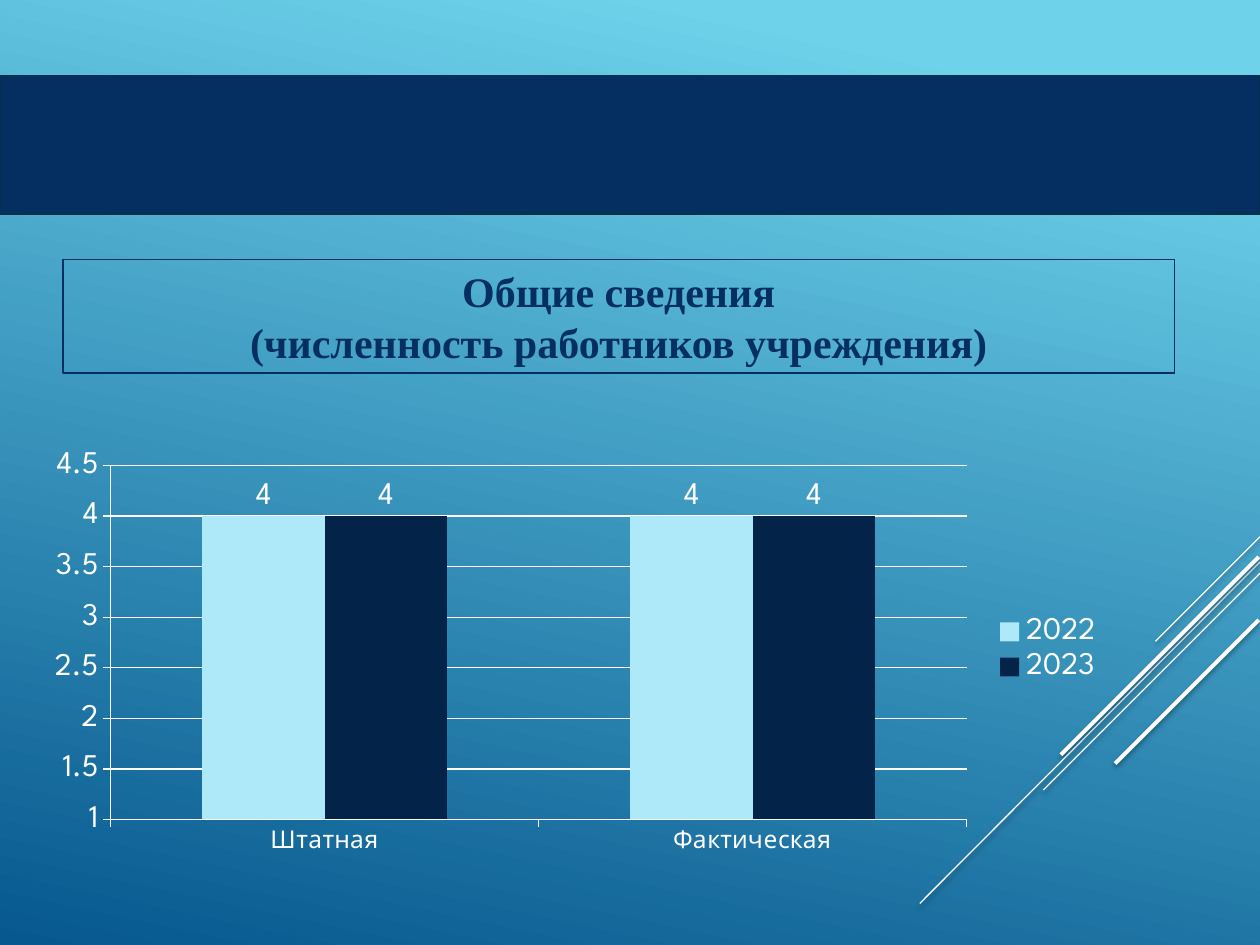
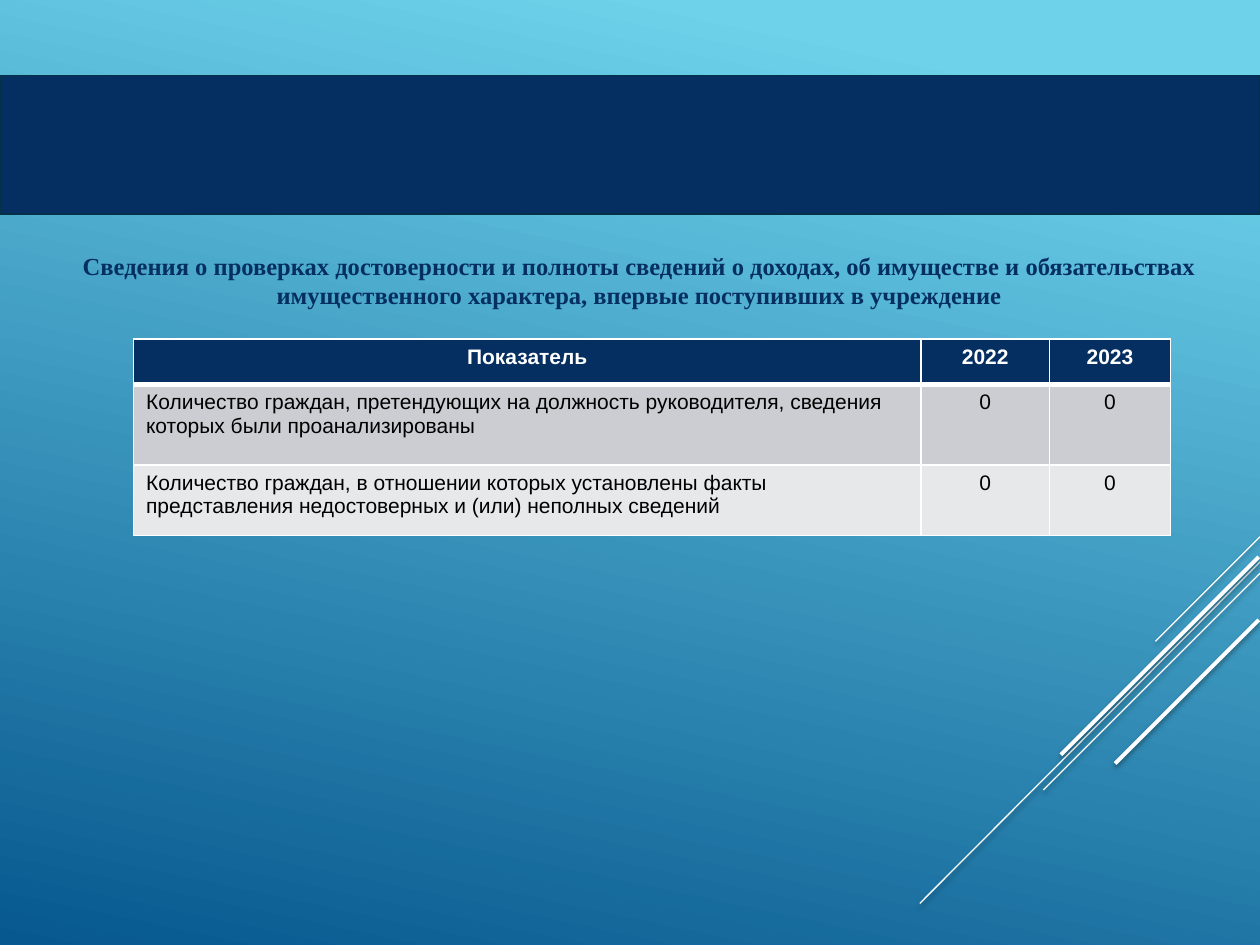
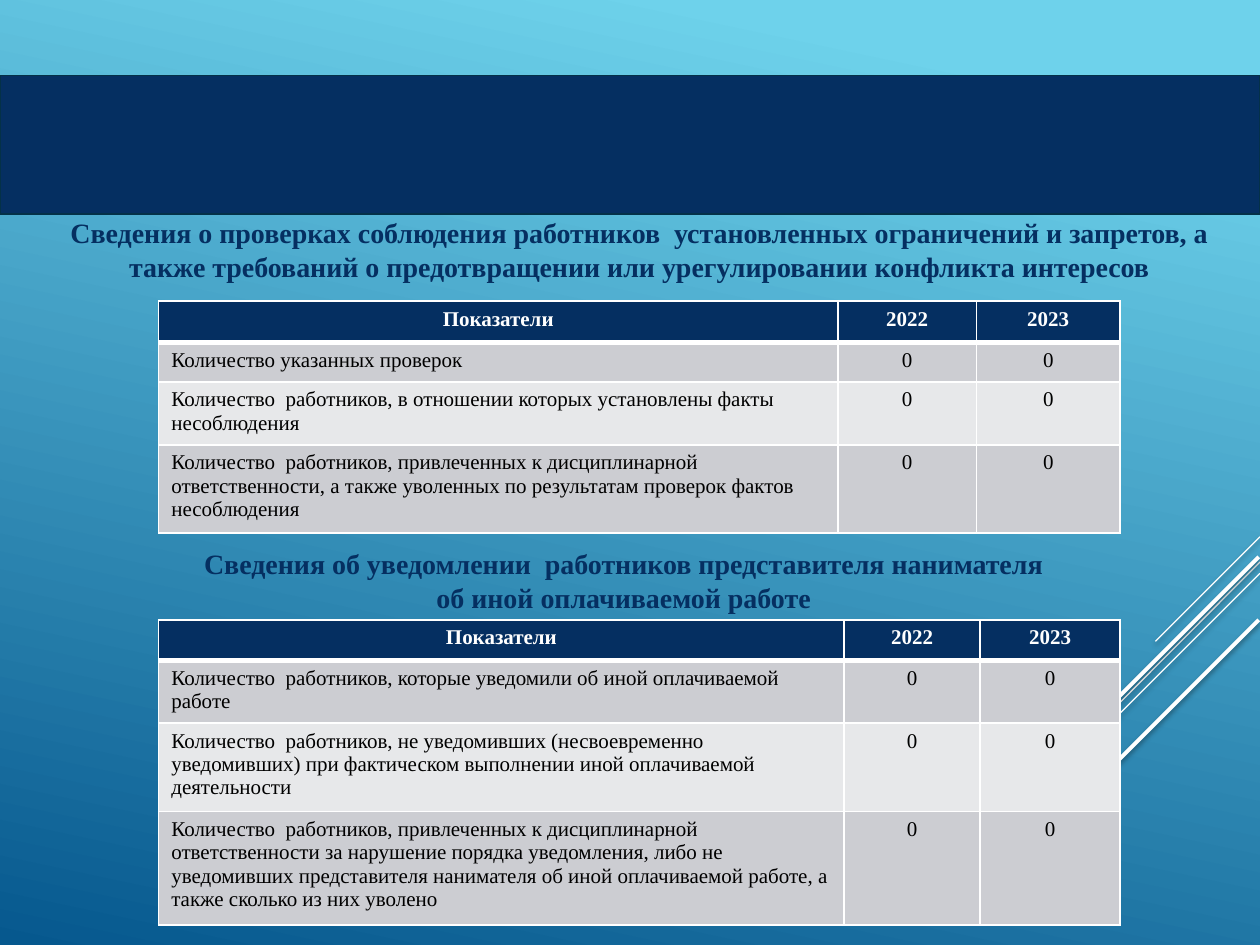
from lxml import etree
from pptx import Presentation
from pptx.chart.data import CategoryChartData
from pptx.dml.color import RGBColor
from pptx.enum.chart import XL_CHART_TYPE, XL_LABEL_POSITION, XL_LEGEND_POSITION, XL_TICK_MARK
from pptx.enum.shapes import MSO_CONNECTOR, MSO_SHAPE
from pptx.enum.text import MSO_ANCHOR, MSO_AUTO_SIZE, PP_ALIGN
from pptx.oxml import parse_xml
from pptx.oxml.ns import nsdecls
from pptx.util import Inches, Pt

COLUMNS = XL_CHART_TYPE.COLUMN_CLUSTERED
LABELS_ABOVE = XL_LABEL_POSITION.OUTSIDE_END
LEGEND_RIGHT = XL_LEGEND_POSITION.RIGHT
TICK_OUT, TICK_NONE = XL_TICK_MARK.OUTSIDE, XL_TICK_MARK.NONE
STRAIGHT = MSO_CONNECTOR.STRAIGHT
BAND = MSO_SHAPE.FLOWCHART_PROCESS
TOP, NO_FIT = MSO_ANCHOR.TOP, MSO_AUTO_SIZE.NONE
LEFT, CENTER = PP_ALIGN.LEFT, PP_ALIGN.CENTER

COLORS = {
    "sky": "6ED2EB", "deep": "06588E", "navy": "052F61", "band_line": "043148",
    "white": "FFFFFF", "black": "000000", "row_odd": "CCCDD2", "row_even": "E7E8EA",
    "bar_2022": "ADE9F8", "bar_2023": "042349",
}
SERIF, SANS, CHART_FONT = "Times New Roman", "Arial", "League Spartan"
YEARS = ["2022", "2023"]
RAYS = [
    (10, 4.26, 9.17, 5.09, 0.75),
    (10, 4.46, 7.3, 7.17, 0.75),
    (10, 4.55, 8.28, 6.27, 0.75),
    (9.99, 4.42, 8.42, 5.99, 2.25),
    (9.99, 4.92, 8.85, 6.06, 2.25),
]


def rgb(name):
    """Return the named palette colour."""
    return RGBColor.from_string(COLORS[name])


def style_font(font, name, size, color, bold=False):
    """Apply typeface, size, colour and weight."""
    font.name, font.size, font.bold = name, Pt(size), bold
    font.color.rgb = rgb(color)


def style_line(line, color, width):
    """Apply a solid line colour and width."""
    line.color.rgb = rgb(color)
    line.width = Pt(width)


def paint_background(prs):
    """Fill the master background with the blue gradient."""
    fill = prs.slide_master.background.fill
    fill.gradient()
    fill.gradient_angle = 258
    for stop, color, position in zip(fill.gradient_stops, ("sky", "deep"), (0.1, 1)):
        stop.color.rgb = rgb(color)
        stop.position = position


def add_ray(s, x1, y1, x2, y2, width):
    """Draw one white diagonal line with a soft shadow."""
    ray = s.shapes.add_connector(STRAIGHT, Inches(x1), Inches(y1), Inches(x2), Inches(y2))
    style_line(ray.line, "white", width)
    ray._element.spPr.append(parse_xml(
        f'<a:effectLst {nsdecls("a")}>'
        f'<a:outerShdw blurRad="{Pt(3.1)}" dist="{Pt(1.6)}" dir="5400000">'
        f'<a:srgbClr val="{COLORS["black"]}"><a:alpha val="38000"/></a:srgbClr>'
        '</a:outerShdw></a:effectLst>'))


def format_heading(sp, text, box, size):
    """Place a heading and set its centred bold navy text."""
    sp.left, sp.top, sp.width, sp.height = (Inches(v) for v in box)
    tf = sp.text_frame
    tf.text = text
    tf.word_wrap, tf.auto_size, tf.vertical_anchor = True, NO_FIT, TOP
    p = tf.paragraphs[0]
    p.alignment = CENTER
    for r in p.runs:
        style_font(r.font, SERIF, size, "navy", True)


def add_slide(prs, title, box, size):
    """Add a slide with the shared decoration and a title."""
    s = prs.slides.add_slide(prs.slide_layouts[5])
    for ray in RAYS:
        add_ray(s, *ray)
    band = s.shapes.add_shape(BAND, 0, Inches(0.6), Inches(10), Inches(1.1))
    band.shadow.inherit = False
    band.fill.solid()
    band.fill.fore_color.rgb = rgb("navy")
    style_line(band.line, "band_line", 1)
    format_heading(s.shapes.title, title, box, size)
    return s


def set_borders(cell, top, bottom):
    """Draw white cell borders, one point wide at the sides."""
    tc_pr = cell._tc.get_or_add_tcPr()
    for side, width in (("L", 1), ("R", 1), ("T", top), ("B", bottom)):
        tc_pr.append(parse_xml(
            f'<a:ln{side} {nsdecls("a")} w="{Pt(width)}"><a:solidFill>'
            f'<a:srgbClr val="{COLORS["white"]}"/></a:solidFill></a:ln{side}>'))


def format_cell(cell, text, row, col, font):
    """Write one cell with the style of its row and column."""
    header = row == 0
    set_borders(cell, 3 if row == 1 else 1, 3 if header else 1)
    cell.fill.solid()
    cell.fill.fore_color.rgb = rgb("navy" if header else "row_odd" if row % 2 else "row_even")
    cell.text = text
    p = cell.text_frame.paragraphs[0]
    p.alignment = CENTER if header or col else LEFT
    style_font(p.runs[0].font, font, 12, "white" if header else "black", header)


def add_indicator_table(s, left, top, widths, heights, header, indicators, font):
    """Add a table of indicators that are zero in both years."""
    rows = [[header, *YEARS]] + [[text, "0", "0"] for text in indicators]
    frame = s.shapes.add_table(len(rows), len(widths), Inches(left), Inches(top),
                               Inches(sum(widths)), Inches(sum(heights)))
    table = frame.table
    table.horz_banding = False
    for column, width in zip(table.columns, widths):
        column.width = Inches(width)
    for i, (height, texts) in enumerate(zip(heights, rows)):
        table.rows[i].height = Inches(height)
        for j, text in enumerate(texts):
            format_cell(table.cell(i, j), text, i, j, font)


def set_plot_layout(chart, x, y, w, h):
    """Fix the inner plot area as fractions of the chart."""
    plot_area = chart._chartSpace.chart.plotArea
    for old in plot_area.findall("{*}layout"):
        plot_area.remove(old)
    layout = parse_xml(f'<c:layout {nsdecls("c")}><c:manualLayout/></c:layout>')
    values = {"layoutTarget": "inner", "xMode": "edge", "yMode": "edge",
              "x": x, "y": y, "w": w, "h": h}
    for tag, value in values.items():
        etree.SubElement(layout[0], f"{{{etree.QName(layout).namespace}}}{tag}", val=str(value))
    plot_area.insert(0, layout)


def add_staff_chart(s):
    """Add the column chart of planned and actual staff."""
    data = CategoryChartData()
    data.categories = ["Штатная", "Фактическая"]
    for year in YEARS:
        data.add_series(year, [4, 4])
    chart = s.shapes.add_chart(COLUMNS, Inches(0.37), Inches(3.33),
                               Inches(8.49), Inches(3.65), data).chart
    style_font(chart.font, CHART_FONT, 18, "white")
    chart.has_title = False
    chart.has_legend = True
    chart.legend.position = LEGEND_RIGHT
    chart.legend.include_in_layout = False
    set_plot_layout(chart, 0.06, 0.1, 0.8, 0.77)

    plot = chart.plots[0]
    plot.gap_width, plot.overlap, plot.vary_by_categories = 150, 0, False
    plot.has_data_labels = True
    plot.data_labels.show_value = True
    plot.data_labels.position = LABELS_ABOVE
    for series in plot.series:
        series.format.fill.solid()
        series.format.fill.fore_color.rgb = rgb(f"bar_{series.name}")

    for axis, size in ((chart.category_axis, 14), (chart.value_axis, 18)):
        style_font(axis.tick_labels.font, CHART_FONT, size, "white")
        style_line(axis.format.line, "white", 0.75)
        axis.major_tick_mark, axis.minor_tick_mark = TICK_OUT, TICK_NONE
    value_axis = chart.value_axis
    value_axis.minimum_scale, value_axis.maximum_scale, value_axis.major_unit = 1, 4.5, 0.5
    style_line(value_axis.major_gridlines.format.line, "white", 0.75)


def main():
    """Build and save the three slides."""
    prs = Presentation()
    prs.slide_width, prs.slide_height = Inches(10), Inches(7.5)
    paint_background(prs)

    s = add_slide(prs, "Общие сведения\v(численность работников учреждения)",
                  (0.5, 2.06, 8.82, 0.9), 24)
    style_line(s.shapes.title.line, "navy", 0.75)
    add_staff_chart(s)

    s = add_slide(prs, "Сведения о проверках достоверности и полноты сведений о доходах, об имуществе "
                  "и обязательствах имущественного характера, впервые поступивших в учреждение",
                  (0.35, 1.94, 9.45, 0.57), 14)
    add_indicator_table(s, 1.06, 2.69, [6.25, 1.02, 0.96], [0.36, 0.64, 0.56], "Показатель", [
        "Количество граждан, претендующих на должность руководителя, сведения которых были "
        "проанализированы",
        "Количество граждан, в отношении которых установлены факты представления недостоверных "
        "и (или) неполных сведений",
    ], SANS)

    s = add_slide(prs, "Сведения о проверках соблюдения работников  установленных ограничений и запретов, "
                  "а также требований о предотвращении или урегулировании конфликта интересов",
                  (0.35, 1.66, 9.45, 0.63), 16)
    add_indicator_table(s, 1.26, 2.39, [5.39, 1.1, 1.14], [0.33, 0.31, 0.5, 0.7], "Показатели", [
        "Количество указанных проверок",
        "Количество  работников, в отношении которых установлены факты несоблюдения",
        "Количество  работников, привлеченных к дисциплинарной ответственности, а также уволенных "
        "по результатам проверок фактов несоблюдения",
    ], SERIF)
    heading = s.shapes.add_textbox(0, 0, 0, 0)
    format_heading(heading, "Сведения об уведомлении  работников представителя нанимателя "
                   "об иной оплачиваемой работе", (1.41, 4.29, 7.08, 0.63), 16)
    add_indicator_table(s, 1.26, 4.92, [5.44, 1.08, 1.11], [0.32, 0.5, 0.7, 0.9], "Показатели", [
        "Количество  работников, которые уведомили об иной оплачиваемой работе",
        "Количество  работников, не уведомивших (несвоевременно уведомивших) при фактическом "
        "выполнении иной оплачиваемой деятельности",
        "Количество  работников, привлеченных к дисциплинарной ответственности за нарушение порядка "
        "уведомления, либо не уведомивших представителя нанимателя об иной оплачиваемой работе, "
        "а также сколько из них уволено",
    ], SERIF)
    prs.save("out.pptx")


if __name__ == "__main__":
    main()
